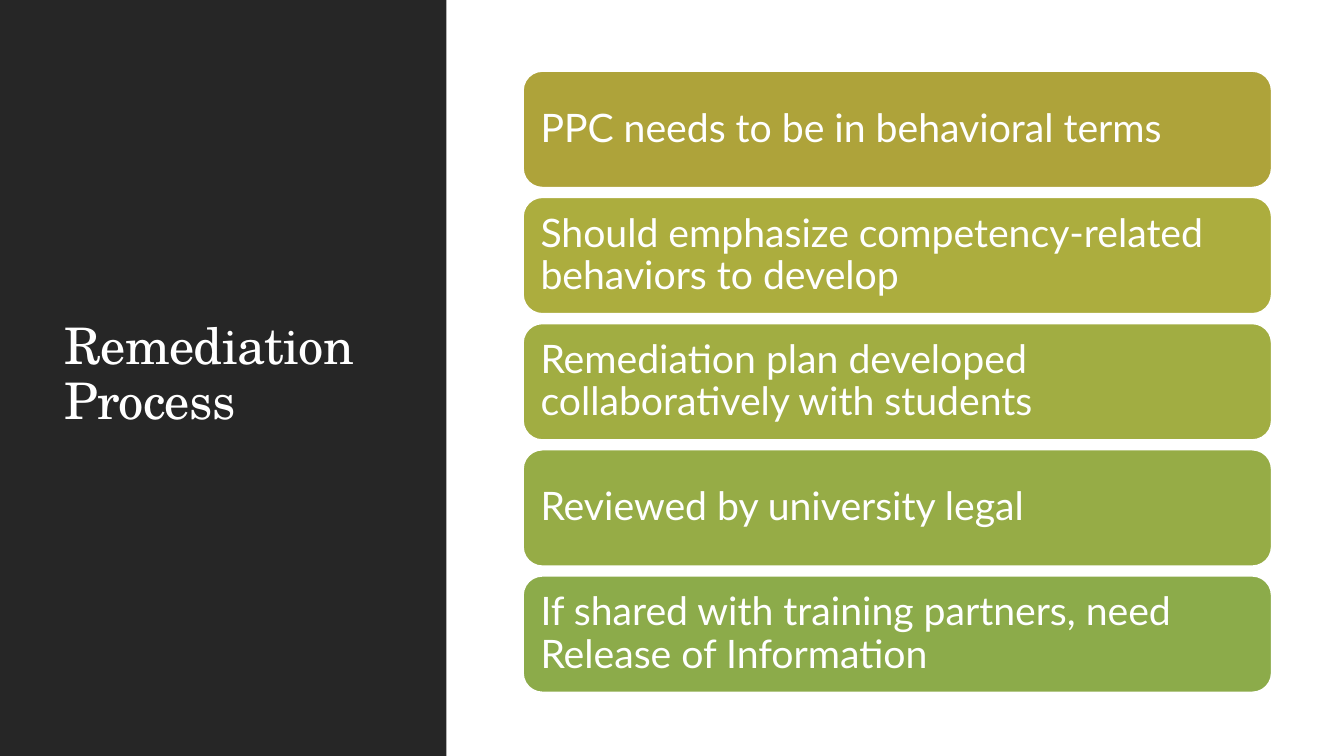
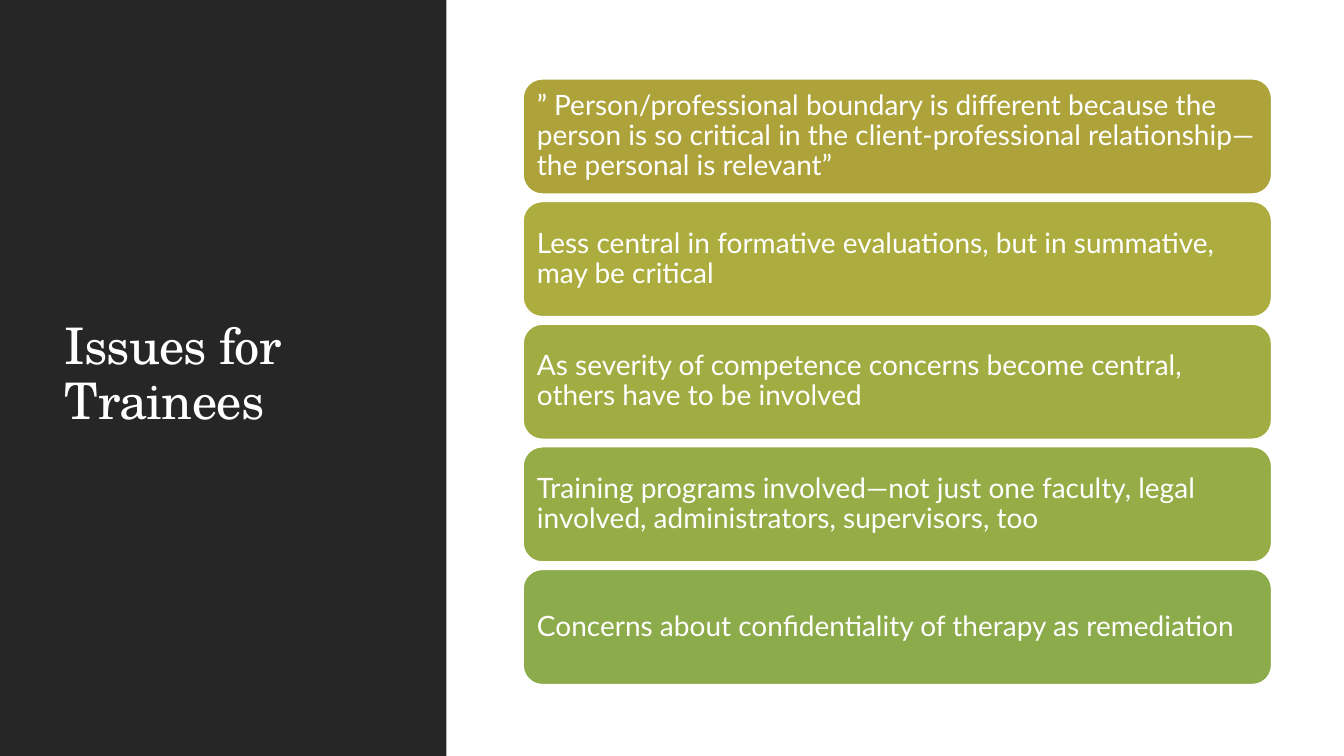
from pptx import Presentation
from pptx.dml.color import RGBColor
from pptx.enum.shapes import MSO_SHAPE as Shape
from pptx.enum.text import MSO_ANCHOR as Anchor, MSO_AUTO_SIZE as AutoSize, PP_ALIGN as Align
from pptx.util import Cm, Pt

WHITE = RGBColor(0xFF, 0xFF, 0xFF)
CHARCOAL = RGBColor(0x26, 0x26, 0x26)
STEP_COLOURS = [
    RGBColor(0xAE, 0xA3, 0x3A),
    RGBColor(0xAC, 0xAD, 0x3E),
    RGBColor(0xA1, 0xAD, 0x42),
    RGBColor(0x96, 0xAC, 0x46),
    RGBColor(0x8C, 0xAB, 0x4A),
]

PAGES = [
    {
        "title": "Remediation Process",
        "size": 28, "inset": 0.3, "height": 2.94, "gap": 0.24,
        "steps": [
            "PPC needs to be in behavioral terms",
            "Should emphasize competency-related behaviors to develop",
            "Remediation plan developed collaboratively with students",
            "Reviewed by university legal",
            "If shared with training partners, need Release of Information",
        ],
    },
    {
        "title": "Issues for Trainees",
        "size": 20, "inset": 0.21, "height": 2.91, "gap": 0.18,
        "steps": [
            "” Person/professional boundary is different because the person is so "
            "critical in the client-professional relationship—the personal is relevant”",
            "Less central in formative evaluations, but in summative, may be critical",
            "As severity of competence concerns become central, others have to be involved",
            "Training programs involved—not just one faculty, legal involved, "
            "administrators, supervisors, too",
            "Concerns about confidentiality of therapy as remediation",
        ],
    },
]

# Lengths in centimetres
SLIDE_WIDTH, SLIDE_HEIGHT = 33.87, 19.05
PANEL_WIDTH = 11.25
TITLE_PLACE = {"left": 1.37, "top": 1.45, "width": 8.56, "height": 16.03}
STEP_LEFT, STEP_WIDTH = 13.18, 18.87
STACK_MIDDLE = 9.62

FRAME_FORMAT = {
    "word_wrap": True,
    "auto_size": AutoSize.NONE,
    "vertical_anchor": Anchor.MIDDLE,
}


def set_all(target, values):
    for name, value in values.items():
        setattr(target, name, value)


def write(box, text, font_name, size, inset):
    """Put white, left-aligned, vertically centred text into a box."""
    frame = box.text_frame
    margins = {f"margin_{side}": Cm(inset) for side in ("left", "top", "right", "bottom")}
    set_all(frame, FRAME_FORMAT | margins)
    para = frame.paragraphs[0]
    set_all(para, {"alignment": Align.LEFT, "line_spacing": 0.9})
    span = para.add_run()
    span.text = text
    set_all(span.font, {"name": font_name, "size": Pt(size)})
    span.font.color.rgb = WHITE
    return span


def add_block(page, kind, place, colour):
    box = page.shapes.add_shape(kind, *(Cm(length) for length in place))
    box.shadow.inherit = False
    box.fill.solid()
    box.fill.fore_color.rgb = colour
    return box


def add_panel(page):
    """Dark band down the left edge, behind the title."""
    panel = add_block(page, Shape.RECTANGLE, (0, 0, PANEL_WIDTH, SLIDE_HEIGHT), CHARCOAL)
    panel.line.fill.background()
    page.shapes.element.insert(2, panel.element)


def add_title(page, text):
    title = page.shapes.title
    set_all(title, {name: Cm(length) for name, length in TITLE_PLACE.items()})
    span = write(title, text, "TeX Gyre Schola", 36, 0.25)
    span.font.element.set("spc", "-50") if hasattr(span.font, "element") else \
        span._r.get_or_add_rPr().set("spc", "-50")


def add_steps(page, content):
    """Stack equal boxes around the middle of the stack."""
    steps, height, gap = content["steps"], content["height"], content["gap"]
    pitch = height + gap
    first_top = STACK_MIDDLE - (len(steps) * pitch - gap) / 2
    for index, (text, colour) in enumerate(zip(steps, STEP_COLOURS)):
        place = (STEP_LEFT, first_top + index * pitch, STEP_WIDTH, height)
        box = add_block(page, Shape.ROUNDED_RECTANGLE, place, colour)
        box.line.color.rgb = WHITE
        box.line.width = Pt(1.25)
        write(box, text, "Lato", content["size"], content["inset"])


def main():
    deck = Presentation()
    set_all(deck, {"slide_width": Cm(SLIDE_WIDTH), "slide_height": Cm(SLIDE_HEIGHT)})
    title_only = deck.slide_layouts[5]
    for content in PAGES:
        page = deck.slides.add_slide(title_only)
        add_panel(page)
        add_title(page, content["title"])
        add_steps(page, content)
    deck.save("out.pptx")


if __name__ == "__main__":
    main()
